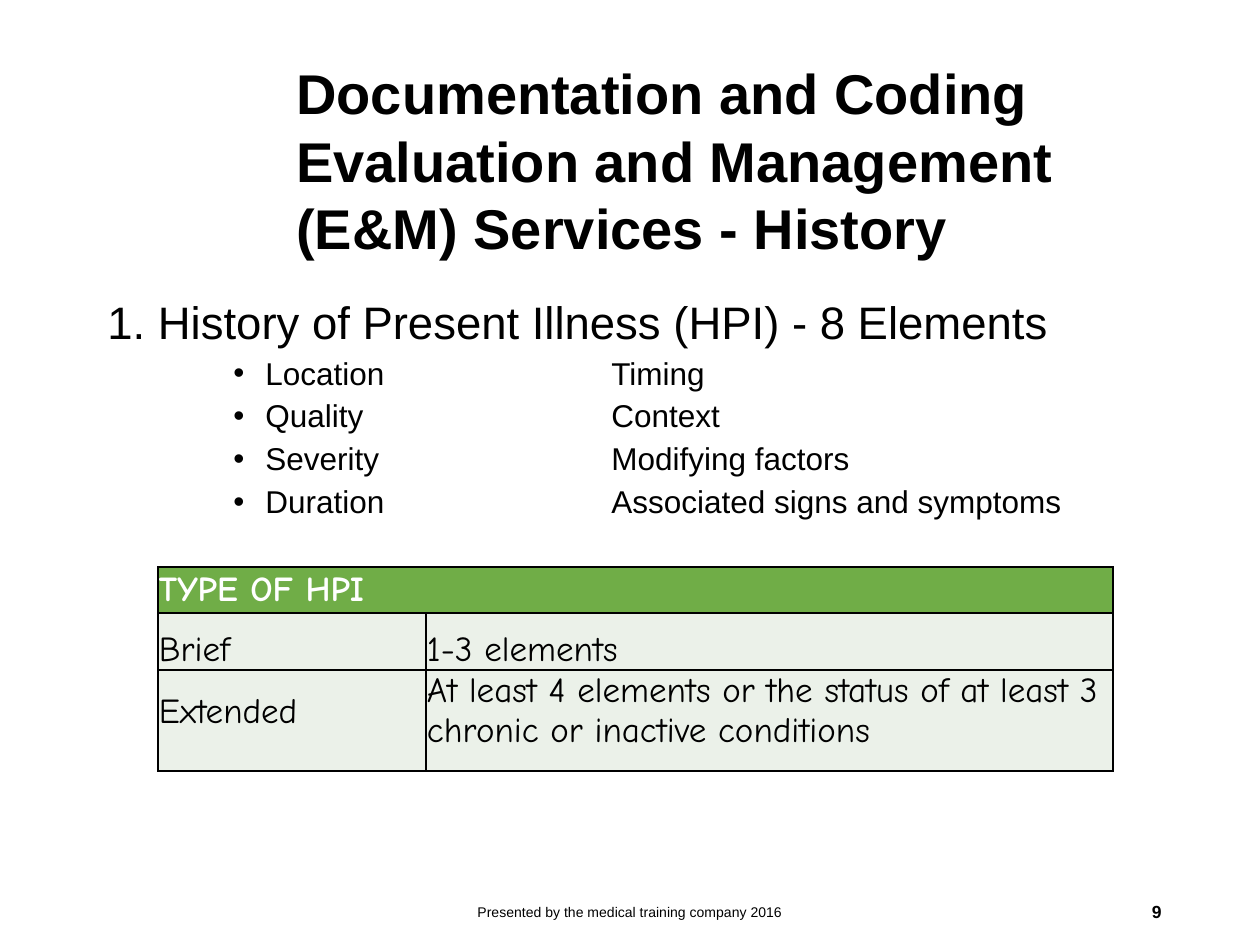
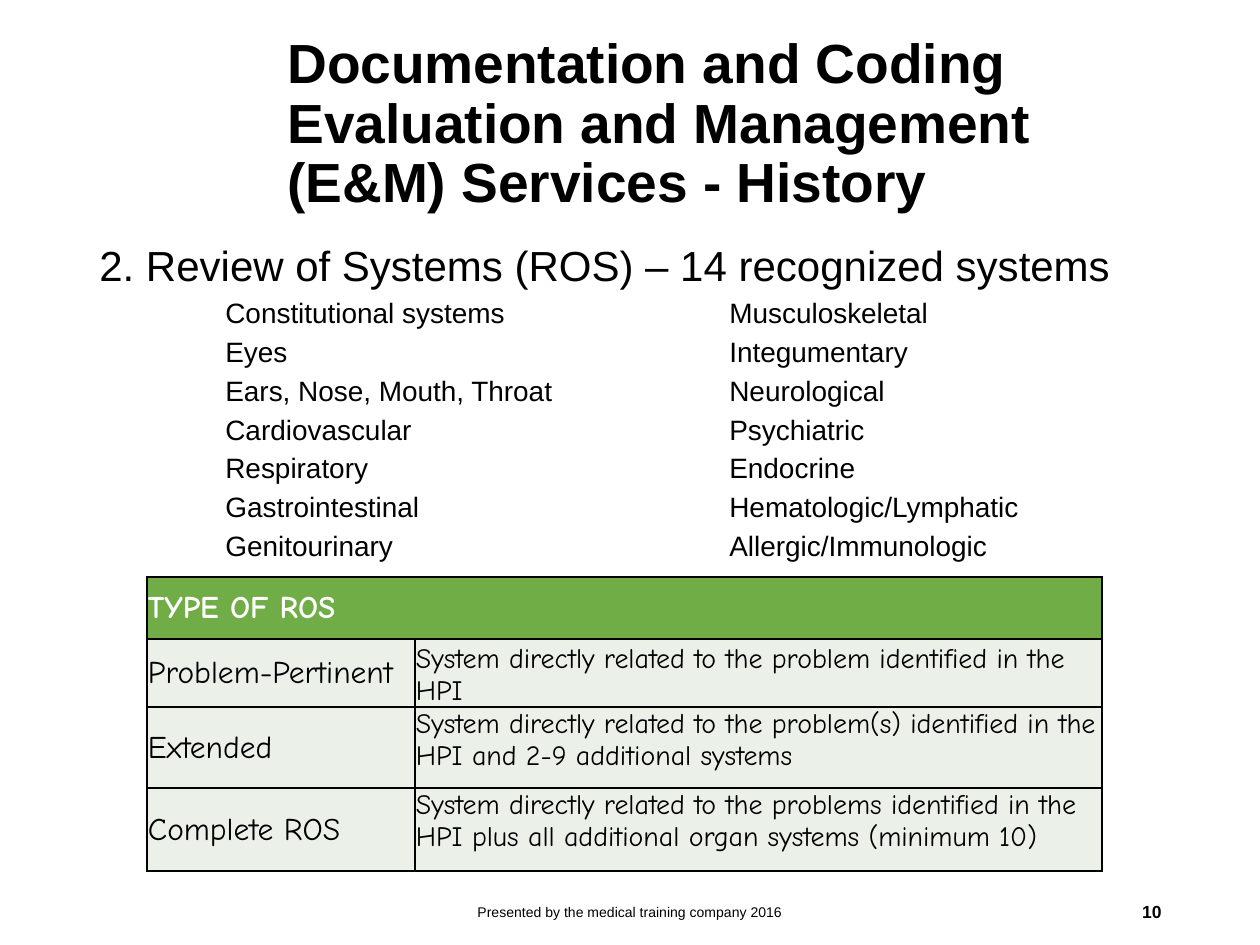
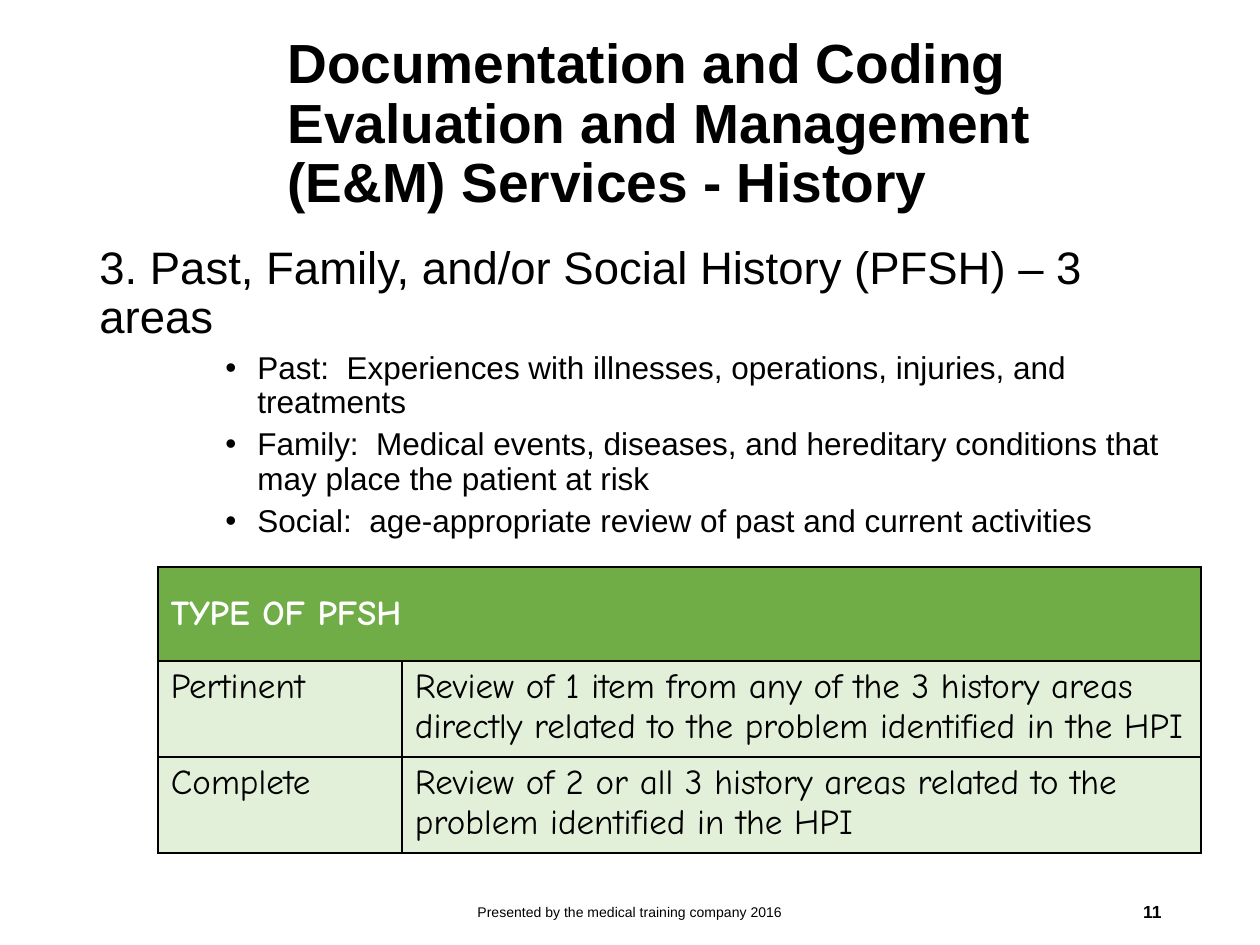
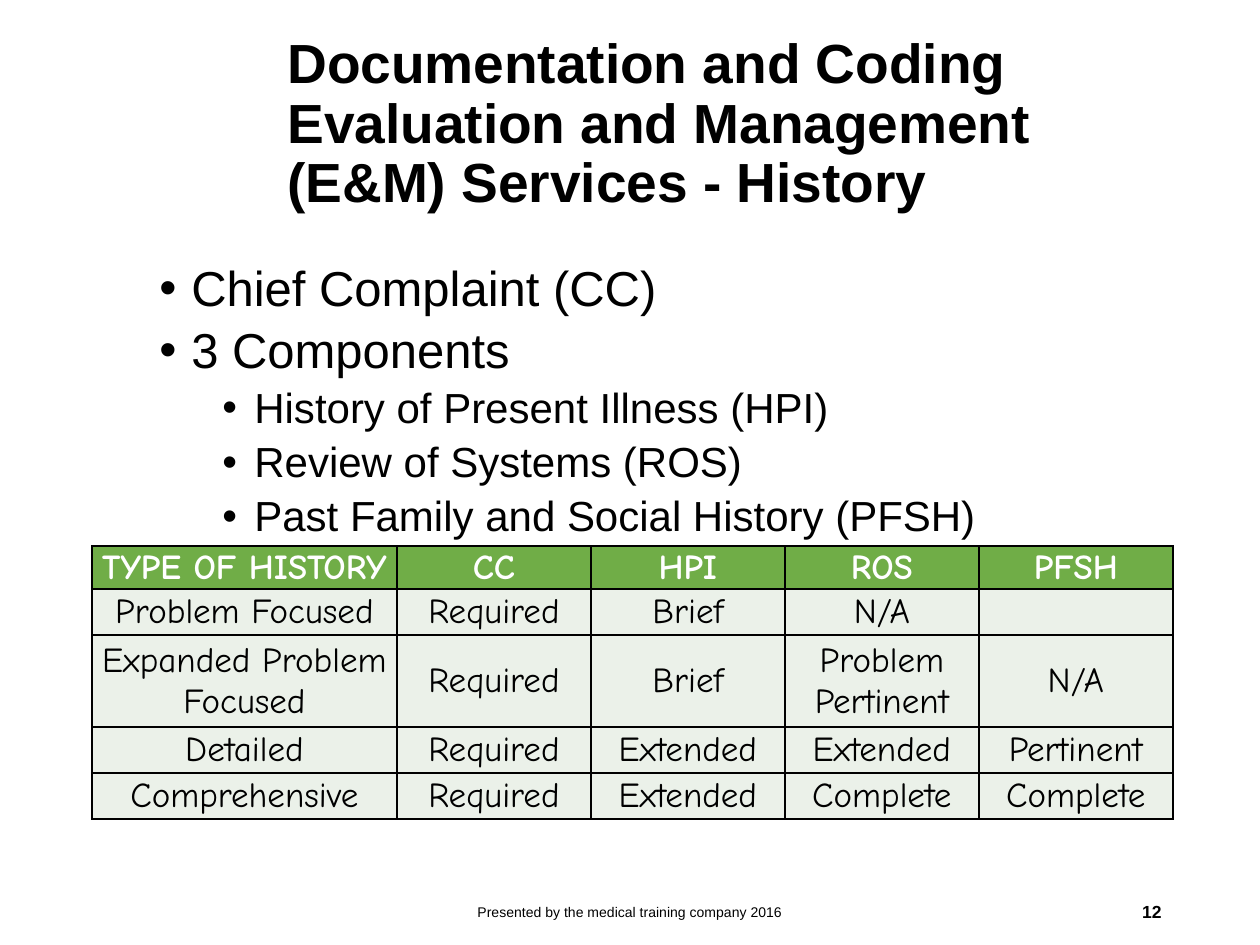
"""Build four slides on documenting the history part of E&M services."""
from lxml import etree
from pptx import Presentation
from pptx import util as u
from pptx.dml.color import RGBColor
from pptx.enum import text as t
from pptx.oxml import ns

PX_PER_INCH = 126
COLORS = {"ink": "000000", "white": "FFFFFF", "green": "70AD47",
          "sage": "EBF1E9", "mint": "E2F0D9"}
BODY_FONT = "Arial"
TABLE_FONT = "Comic Neue"
TITLE = ("Documentation and Coding", "Evaluation and Management (E&M) Services - History")
FOOTER = "Presented by the medical training company 2016"
TITLE_BOX = (275, 34, 900, 183)
BODY_BOX = (87, 239, 1086, 611)
FOOTER_BOX = (417, 887, 426, 50)
NUMBER_BOX = (890, 887, 284, 50)
INSETS = (13, 6, 13, 6)
TIGHT = (1, 1, 1, 0)
INDENTS = {"heading": (0, 0), "plain": (126, 0), "point": (95, -32), "subpoint": (158, -32)}
ANCHORS = {"t": t.MSO_ANCHOR.TOP, "m": t.MSO_ANCHOR.MIDDLE, "b": t.MSO_ANCHOR.BOTTOM}
ALIGNS = {"l": t.PP_ALIGN.LEFT, "c": t.PP_ALIGN.CENTER, "r": t.PP_ALIGN.RIGHT}


def px(length):
    """Turn px into EMU."""
    return u.Emu(round(length * 914400 / PX_PER_INCH))


def add_child(parent, tag, **attributes):
    """Append a DrawingML element."""
    return etree.SubElement(parent, ns.qn(tag), attributes)


def add_run(paragraph, words, size, color="ink", bold=False, font=BODY_FONT):
    """Add one styled run."""
    run = paragraph.add_run()
    run.text = words
    run.font.name = font
    run.font.size = u.Pt(size)
    run.font.bold = bold
    run.font.color.rgb = RGBColor.from_string(COLORS[color])


def add_frame(slide, box, anchor="t", top_inset=6):
    """Add a wrapping text box and return its text frame."""
    frame = slide.shapes.add_textbox(*map(px, box)).text_frame
    frame.word_wrap = True
    frame.vertical_anchor = ANCHORS[anchor]
    frame.margin_top = px(top_inset)
    return frame


def add_title(slide, lines=TITLE, box=TITLE_BOX, size=31.5, spacing=0.9, anchor="m"):
    """Add the bold slide title."""
    paragraph = add_frame(slide, box, anchor).paragraphs[0]
    paragraph.line_spacing = spacing
    for index, line in enumerate(lines):
        if index:
            paragraph.add_line_break()
        add_run(paragraph, line, size, bold=True)


def add_body(slide, entries, box=BODY_BOX, top_inset=6):
    """Add the outline; entries are (kind, size, words)."""
    frame = add_frame(slide, box, top_inset=top_inset)
    for index, (kind, size, words) in enumerate(entries):
        paragraph = frame.add_paragraph() if index else frame.paragraphs[0]
        left, hanging = INDENTS[kind]
        properties = paragraph._p.get_or_add_pPr()
        properties.set("marL", str(px(left)))
        properties.set("indent", str(px(hanging)))
        properties.set("defTabSz", str(px(PX_PER_INCH)))
        if hanging:
            add_child(properties, "a:buFont", typeface=BODY_FONT)
            add_child(properties, "a:buChar", char="•")
        else:
            add_child(properties, "a:buNone")
        paragraph.line_spacing = 0.9
        paragraph.space_before = u.Pt(5 if index else 0)
        add_run(paragraph, words, size)


def add_footer(slide, number):
    """Add the presenter line and the slide number."""
    for box, align, words, size, bold in ((FOOTER_BOX, "c", FOOTER, 8, False),
                                          (NUMBER_BOX, "r", str(number), 10, True)):
        paragraph = add_frame(slide, box, "m").paragraphs[0]
        paragraph.alignment = ALIGNS[align]
        add_run(paragraph, words, size, bold=bold)


def draw_borders(cell, open_edge):
    """Rule every side of a cell but the open one."""
    properties = cell._tc.get_or_add_tcPr()
    for edge in "LRTB":
        line = add_child(properties, f"a:ln{edge}", w=str(u.Pt(1)))
        if edge == open_edge:
            add_child(line, "a:noFill")
        else:
            add_child(add_child(line, "a:solidFill"), "a:srgbClr", val=COLORS["ink"])


def add_table(slide, origin, widths, rows, sizes, fill="sage", insets=TIGHT,
              align="l", merges=(), open_edges=None):
    """Add a table; rows are (height, anchors, texts) and the first is the header."""
    total = sum(height for height, _, _ in rows)
    box = (*origin, sum(widths), total)
    table = slide.shapes.add_table(len(rows), len(widths), *map(px, box)).table
    table.horz_banding = False
    for column, width in zip(table.columns, widths):
        column.width = px(width)
    for r, (height, anchors, texts) in enumerate(rows):
        table.rows[r].height = px(height)
        header = r == 0
        for c, words in enumerate(texts):
            cell = table.cell(r, c)
            draw_borders(cell, (open_edges or {}).get((r, c)))
            cell.fill.solid()
            cell.fill.fore_color.rgb = RGBColor.from_string(COLORS["green" if header else fill])
            cell.margin_left, cell.margin_top, cell.margin_right, cell.margin_bottom = map(px, insets)
            cell.vertical_anchor = ANCHORS[anchors[c]]
            paragraph = cell.text_frame.paragraphs[0]
            paragraph.alignment = ALIGNS[align]
            if words:
                add_run(paragraph, words, sizes[c], "white" if header else "ink", header, TABLE_FONT)
    for first, last in merges:
        table.cell(*first).merge(table.cell(*last))


def build_hpi(slide):
    """History of present illness."""
    add_body(slide, [
        ("heading", 26, "1. History of Present Illness (HPI) - 8 Elements"),
        ("subpoint", 18, "Location\t\tTiming"),
        ("subpoint", 18, "Quality\t\tContext"),
        ("subpoint", 18, "Severity\t\tModifying factors"),
        ("subpoint", 18, "Duration\t\tAssociated signs and symptoms"),
    ], box=(95, 294, 1086, 611))
    add_table(slide, (158, 567), (268, 687), [
        (46, "mm", ("TYPE OF HPI", "")),
        (57, "bb", ("Brief", "1-3 elements")),
        (62, "bt", ("Extended", "At least 4 elements or the status of at least 3 "
                                "chronic or inactive conditions")),
        (38, "tt", ("", "")),
    ], (20, 20), merges=[((0, 0), (0, 1)), ((2, 1), (3, 1))],
        open_edges={(2, 0): "B", (3, 0): "T"})
    add_title(slide, box=(284, 53, 872, 217), size=32, spacing=1.0, anchor="t")


def build_ros(slide):
    """Review of systems."""
    systems = ("Constitutional systems\t\tMusculoskeletal", "Eyes\t\t\t\tIntegumentary",
               "Ears, Nose, Mouth, Throat\t\tNeurological", "Cardiovascular\t\t\tPsychiatric",
               "Respiratory\t\t\tEndocrine", "Gastrointestinal\t\t\tHematologic/Lymphatic",
               "Genitourinary\t\t\tAllergic/Immunologic")
    add_body(slide, [("heading", 24, "2. Review of Systems (ROS) – 14 recognized systems")]
             + [("plain", 16, pair) for pair in systems])
    add_title(slide)
    add_table(slide, (147, 577), (268, 687), [
        (62, "mm", ("TYPE OF ROS", "")),
        (66, "mb", ("Problem-Pertinent",
                    "System directly related to the problem identified in the HPI")),
        (81, "mt", ("Extended", "System directly related to the problem(s) identified in the "
                                "HPI and 2-9 additional systems")),
        (83, "mt", ("Complete ROS", "System directly related to the problems identified in the "
                                    "HPI plus all additional organ systems (minimum 10)")),
    ], (18, 16), merges=[((0, 0), (0, 1))])


def build_pfsh(slide):
    """Past, family and social history."""
    add_body(slide, [
        ("heading", 26, "3. Past, Family, and/or Social History (PFSH) – 3 areas"),
        ("subpoint", 18, "Past:  Experiences with illnesses, operations, injuries, and treatments"),
        ("subpoint", 18, "Family:  Medical events, diseases, and hereditary conditions that "
                         "may place the patient at risk"),
        ("subpoint", 18, "Social:  age-appropriate review of past and current activities"),
    ])
    add_title(slide)
    add_table(slide, (158, 567), (244, 799), [
        (94, "mm", ("TYPE OF PFSH", "")),
        (94, "tt", ("Pertinent", "Review of 1 item from any of the 3 history areas "
                                 "directly related to the problem identified in the HPI")),
        (93, "tt", ("Complete", "Review of 2 or all 3 history areas related to the "
                                "problem identified in the HPI")),
    ], (20, 20), fill="mint", insets=INSETS, merges=[((0, 0), (0, 1))])


def build_summary(slide):
    """History types by required component."""
    add_body(slide, [
        ("point", 28, "Chief Complaint (CC)"),
        ("point", 28, "3 Components"),
        ("subpoint", 24, "History of Present Illness (HPI)"),
        ("subpoint", 24, "Review of Systems (ROS)"),
        ("subpoint", 24, "Past Family and Social History (PFSH)"),
    ], box=(84, 126, 1187, 735), top_inset=138)
    add_title(slide, lines=(" ".join(TITLE),))
    middle = "m" * 5
    add_table(slide, (92, 546), (305, 194, 194, 194, 194), [
        (41, middle, ("TYPE OF HISTORY", "CC", "HPI", "ROS", "PFSH")),
        (46, middle, ("Problem Focused", "Required", "Brief", "N/A", "")),
        (92, middle, ("Expanded Problem Focused", "Required", "Brief", "Problem Pertinent", "N/A")),
        (46, middle, ("Detailed", "Required", "Extended", "Extended", "Pertinent")),
        (46, middle, ("Comprehensive", "Required", "Extended", "Complete", "Complete")),
    ], (20,) * 5, align="c")


def main():
    """Build and save the deck."""
    deck = Presentation()
    deck.slide_width, deck.slide_height = px(1260), px(945)
    for number, build in enumerate((build_hpi, build_ros, build_pfsh, build_summary), 9):
        slide = deck.slides.add_slide(deck.slide_layouts[6])
        build(slide)
        add_footer(slide, number)
    deck.save("out.pptx")


if __name__ == "__main__":
    main()
